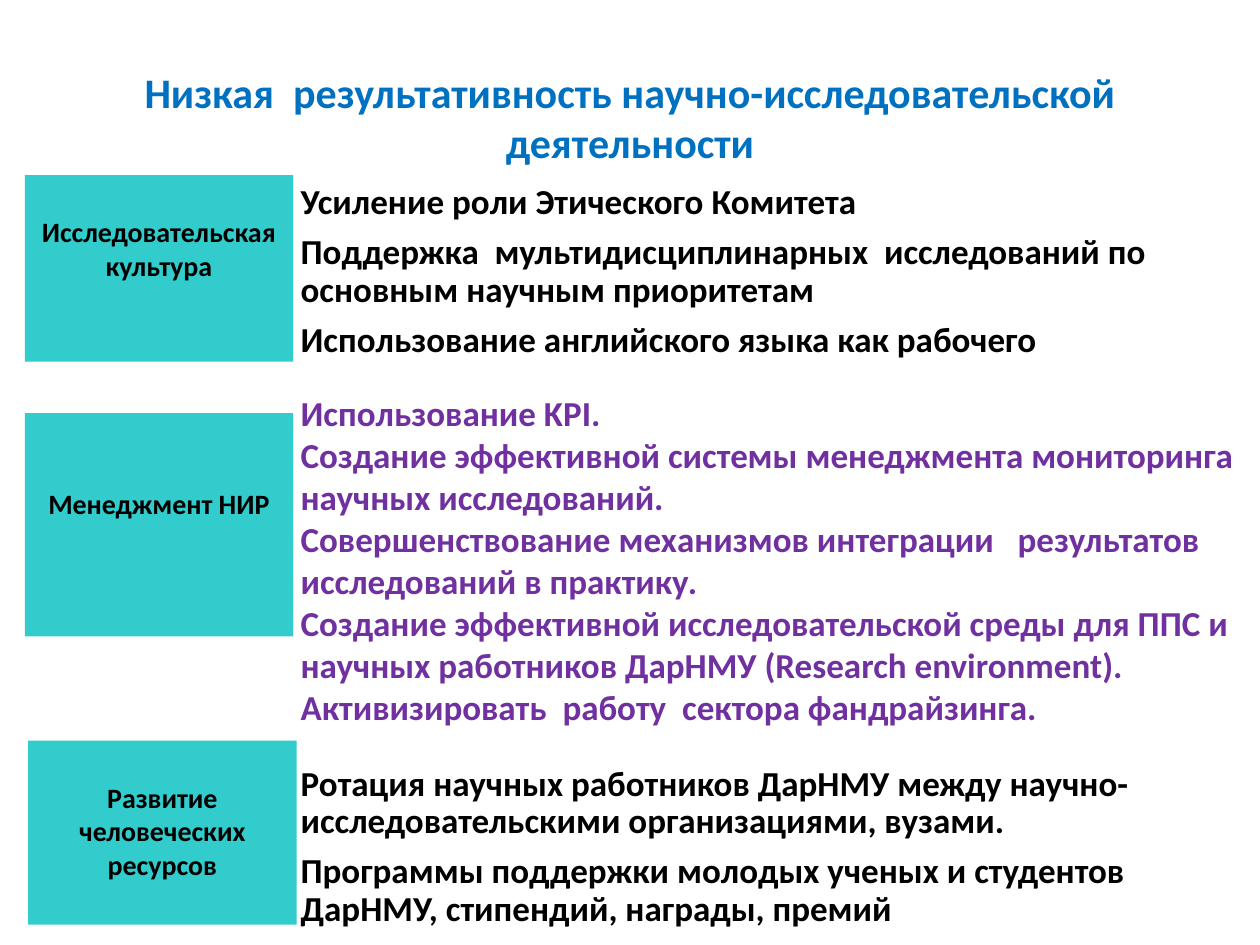
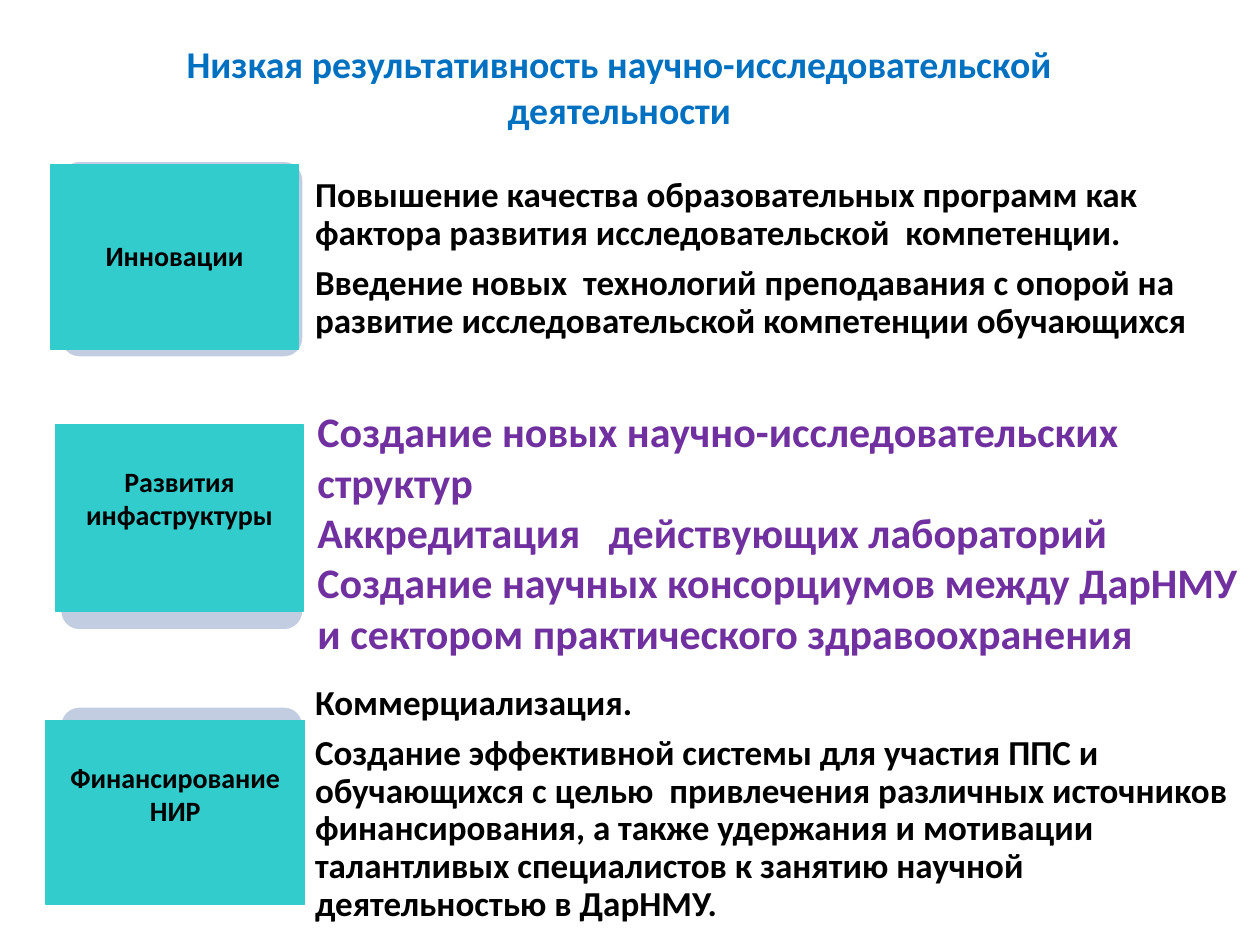
"""Builds two slides on raising the results of university research."""
import pptx
import pptx.dml.color
import pptx.enum.shapes
import pptx.enum.text
import pptx.oxml.ns
import pptx.util
from lxml import etree

Cm, Pt = pptx.util.Cm, pptx.util.Pt
RGBColor = pptx.dml.color.RGBColor
MSO_SHAPE = pptx.enum.shapes.MSO_SHAPE
ANCHOR = pptx.enum.text.MSO_ANCHOR
ALIGN = pptx.enum.text.PP_ALIGN

BLUE = RGBColor(0x00, 0x70, 0xC0)
PURPLE = RGBColor(0x70, 0x30, 0xA0)
BLACK = RGBColor(0x00, 0x00, 0x00)
TEAL = RGBColor(0x33, 0xCC, 0xCC)
PALE = RGBColor(0xC2, 0xCD, 0xE1)
WHITE = RGBColor(0xFF, 0xFF, 0xFF)
FONT = "Calibri"
COMPARISON = 4
INSET = 0.13
LABEL_LINE = 0.67

SLIDES = [
    {
        "title": "Низкая  результативность научно-исследовательской деятельности",
        "title_box": (1.27, 0.76, 22.86, 3.18),
        "title_size": 24,
        "list_left": 5.86,
        "list_width": 19.54,
        "plates": False,
        "rows": [
            {"label": "Исследовательская\nкультура", "drop": 1,
             "label_box": (0.5, 3.53, 5.41, 3.76),
             "top": 3.53, "height": 3.91, "size": 20, "color": BLACK,
             "items": ["Усиление роли Этического Комитета",
                       "Поддержка  мультидисциплинарных  исследований по основным научным приоритетам",
                       "Использование английского языка как рабочего"]},
            {"label": "Менеджмент НИР", "drop": 2,
             "label_box": (0.5, 8.33, 5.41, 4.5),
             "top": 7.82, "height": 6.91, "size": 20, "color": PURPLE,
             "items": ["Использование KPI.",
                       "Создание эффективной системы менеджмента мониторинга научных исследований.",
                       "Совершенствование механизмов интеграции   результатов исследований в практику.",
                       "Создание эффективной исследовательской среды для ППС и научных работников "
                       "ДарНМУ (Research environment).",
                       "Активизировать  работу  сектора фандрайзинга."]},
            {"label": "Развитие человеческих ресурсов", "drop": 1,
             "label_box": (0.57, 14.93, 5.41, 3.71),
             "top": 15.13, "height": 3.91, "size": 20, "color": BLACK,
             "items": ["Ротация научных работников ДарНМУ между научно-исследовательскими "
                       "организациями, вузами.",
                       "Программы поддержки молодых ученых и студентов ДарНМУ, стипендий, "
                       "награды, премий"]},
        ],
    },
    {
        "title": "Низкая результативность научно-исследовательской деятельности",
        "title_box": (1.27, 0.76, 22.43, 1.96),
        "title_size": 21.6,
        "list_left": 6.15,
        "list_width": 19.25,
        "plates": True,
        "rows": [
            {"label": "Инновации", "drop": 2,
             "label_box": (1.02, 3.33, 5, 3.71),
             "top": 2.72, "height": 5, "size": 20, "color": BLACK,
             "items": ["Повышение качества образовательных программ как фактора развития "
                       "исследовательской  компетенции.",
                       "Введение новых  технологий преподавания с опорой на развитие "
                       "исследовательской компетенции обучающихся"]},
            {"label": "Развития инфаструктуры", "drop": 1,
             "label_box": (1.12, 8.56, 5, 3.76),
             "top": 8.22, "height": 5, "size": 24, "color": PURPLE,
             "items": ["Создание новых научно-исследовательских структур",
                       "Аккредитация   действующих лабораторий",
                       "Создание научных консорциумов между ДарНМУ и сектором практического "
                       "здравоохранения"]},
            {"label": "Финансирование НИР", "drop": 1,
             "label_box": (0.93, 14.53, 5.21, 3.71),
             "top": 13.72, "height": 5, "size": 20, "color": BLACK,
             "items": ["Коммерциализация.",
                       "Создание эффективной системы для участия ППС и обучающихся с целью  "
                       "привлечения различных источников финансирования, а также удержания и "
                       "мотивации талантливых специалистов к занятию научной деятельностью в ДарНМУ."]},
        ],
    },
]


def write(sp, text, size, color, align, anchor):
    tf = sp.text_frame
    tf.text = text
    tf.word_wrap = True
    tf.auto_size = pptx.enum.text.MSO_AUTO_SIZE.NONE
    tf.vertical_anchor = anchor
    for p in tf.paragraphs:
        p.alignment = align
        for r in p.runs:
            r.font.name = FONT
            r.font.size = Pt(size)
            r.font.bold = True
            r.font.color.rgb = color
    return tf


def add_block(slide, kind, box, fill):
    sp = slide.shapes.add_shape(kind, *map(Cm, box))
    sp.shadow.inherit = False
    sp.fill.solid()
    sp.fill.fore_color.rgb = fill
    sp.line.fill.background()
    return sp


prs = pptx.Presentation()
prs.slide_width, prs.slide_height = Cm(25.4), Cm(19.05)

for data in SLIDES:
    slide = prs.slides.add_slide(prs.slide_layouts[COMPARISON])
    title, *bodies = [sp for sp in slide.placeholders if sp.placeholder_format.idx <= 4]
    title.left, title.top, title.width, title.height = map(Cm, data["title_box"])
    write(title, data["title"], data["title_size"], BLUE, ALIGN.CENTER, ANCHOR.MIDDLE)

    for body, row in zip(bodies, data["rows"]):
        body.left, body.top = Cm(data["list_left"]), Cm(row["top"])
        body.width, body.height = Cm(data["list_width"]), Cm(row["height"])
        tf = write(body, "\n".join(row["items"]), row["size"], row["color"], ALIGN.LEFT, ANCHOR.MIDDLE)
        margin = Cm(0.25 if row["size"] == 24 else 0.2)
        tf.margin_left = tf.margin_right = tf.margin_top = tf.margin_bottom = margin
        black = row["color"] == BLACK
        for p in tf.paragraphs:
            p.line_spacing = 0.9 if black else 1.0
            p.space_before = Pt(0)
            p.space_after = Pt(7 if black else 0)
            pPr = p._p.get_or_add_pPr()
            pPr.set("marL", "0")
            pPr.set("indent", "0")
            etree.SubElement(pPr, pptx.oxml.ns.qn("a:buNone"))

        if data["plates"]:
            plate = add_block(slide, MSO_SHAPE.ROUNDED_RECTANGLE,
                              (1.2, row["top"] + 0.51, 4.93, 3.99), PALE)
            plate.adjustments[0] = 0.1
            plate.line.color.rgb = WHITE
            plate.line.width = Pt(2)

        label = add_block(slide, MSO_SHAPE.RECTANGLE, row["label_box"], TEAL)
        if data["plates"]:
            label.line.color.rgb = TEAL
            label.line.width = Pt(0.75)
        tf = write(label, row["label"], 16, BLACK, ALIGN.CENTER, ANCHOR.TOP)
        tf.margin_top = Cm(INSET + LABEL_LINE * row["drop"])

    for sp in list(slide.placeholders):
        if not sp.text_frame.text:
            sp._element.getparent().remove(sp._element)

prs.save("out.pptx")
